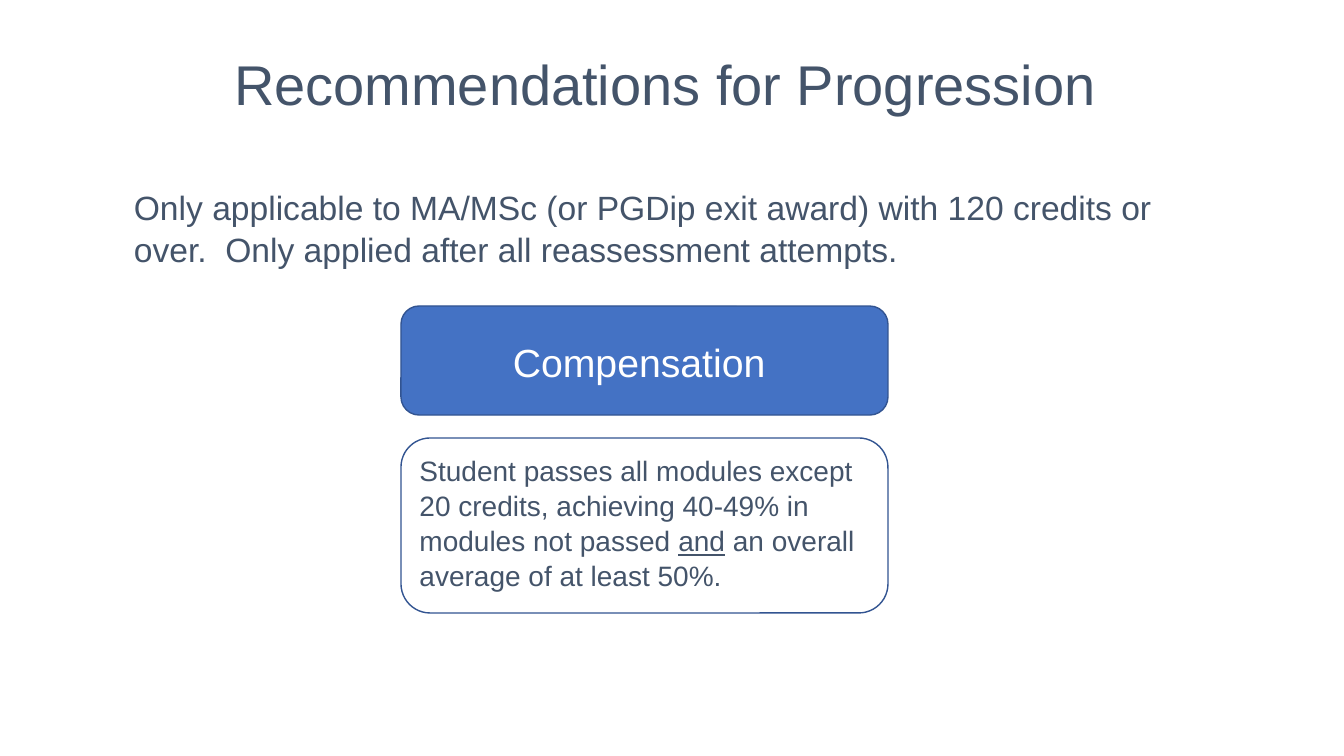
from pptx import Presentation
from pptx.dml.color import RGBColor
from pptx.enum.shapes import MSO_SHAPE as Shape
from pptx.enum.text import MSO_ANCHOR as Anchor, PP_ALIGN as Align
from pptx.util import Emu, Pt

EMU_PER_PX = 914400 / 100.8
FONT = "Arial"
SLATE, BLUE, NAVY, WHITE = "44546A", "4472C4", "325491", "FFFFFF"


def px(length):
    return Emu(round(length * EMU_PER_PX))


def paint(color_format, color):
    color_format.rgb = RGBColor.from_string(color)


def write(shape, runs, size, color, align=Align.LEFT, anchor=Anchor.MIDDLE, spacing=1.05):
    """Fill a shape with one paragraph of (text, underlined) runs."""
    frame = shape.text_frame
    frame.word_wrap = True
    frame.vertical_anchor = anchor
    paragraph = frame.paragraphs[0]
    paragraph.alignment = align
    paragraph.line_spacing = spacing
    for text, underlined in runs:
        run = paragraph.add_run()
        run.text = text
        run.font.name = FONT
        run.font.size = Pt(size)
        run.font.underline = underlined
        paint(run.font.color, color)


def add_title(slide, text):
    title = slide.shapes.title
    title.left, title.top, title.width, title.height = map(px, (93, 14, 1159, 146))
    write(title, [(text, False)], 40, SLATE, Align.CENTER, spacing=0.9)


def add_box(slide, left, top, width, height, fill, line):
    box = slide.shapes.add_shape(
        Shape.ROUNDED_RECTANGLE, px(left), px(top), px(width), px(height))
    box.shadow.inherit = False
    box.fill.solid()
    paint(box.fill.fore_color, fill)
    paint(box.line.color, line)
    box.line.width = Pt(1)
    return box


def main():
    presentation = Presentation()
    presentation.slide_width, presentation.slide_height = px(1344), px(756)
    title_only = presentation.slide_layouts[5]
    slide = presentation.slides.add_slide(title_only)

    add_title(slide, "Recommendations for Progression ")

    # Heading box and the rule below it share a column
    column_left, column_width = 401, 487
    heading = add_box(slide, column_left, 306, column_width, 109, BLUE, NAVY)
    write(heading, [("Compensation ", False)], 28, WHITE, Align.CENTER)

    rule = add_box(slide, column_left, 438, column_width, 175, WHITE, NAVY)
    write(rule, [
        ("Student passes all modules except 20 credits, achieving 40-49% in "
         "modules not passed ", False),
        ("and", True),
        (" an overall average of at least 50%.", False),
    ], 20, SLATE, anchor=Anchor.TOP)

    # Scope statement under the title
    scope = add_box(slide, 120, 186, 1103, 82, WHITE, WHITE)
    write(scope, [
        ("Only applicable to MA/MSc (or PGDip exit award) with 120 credits or over.  "
         "Only applied after all reassessment attempts. ", False),
    ], 24, SLATE)

    presentation.save("out.pptx")


if __name__ == "__main__":
    main()
